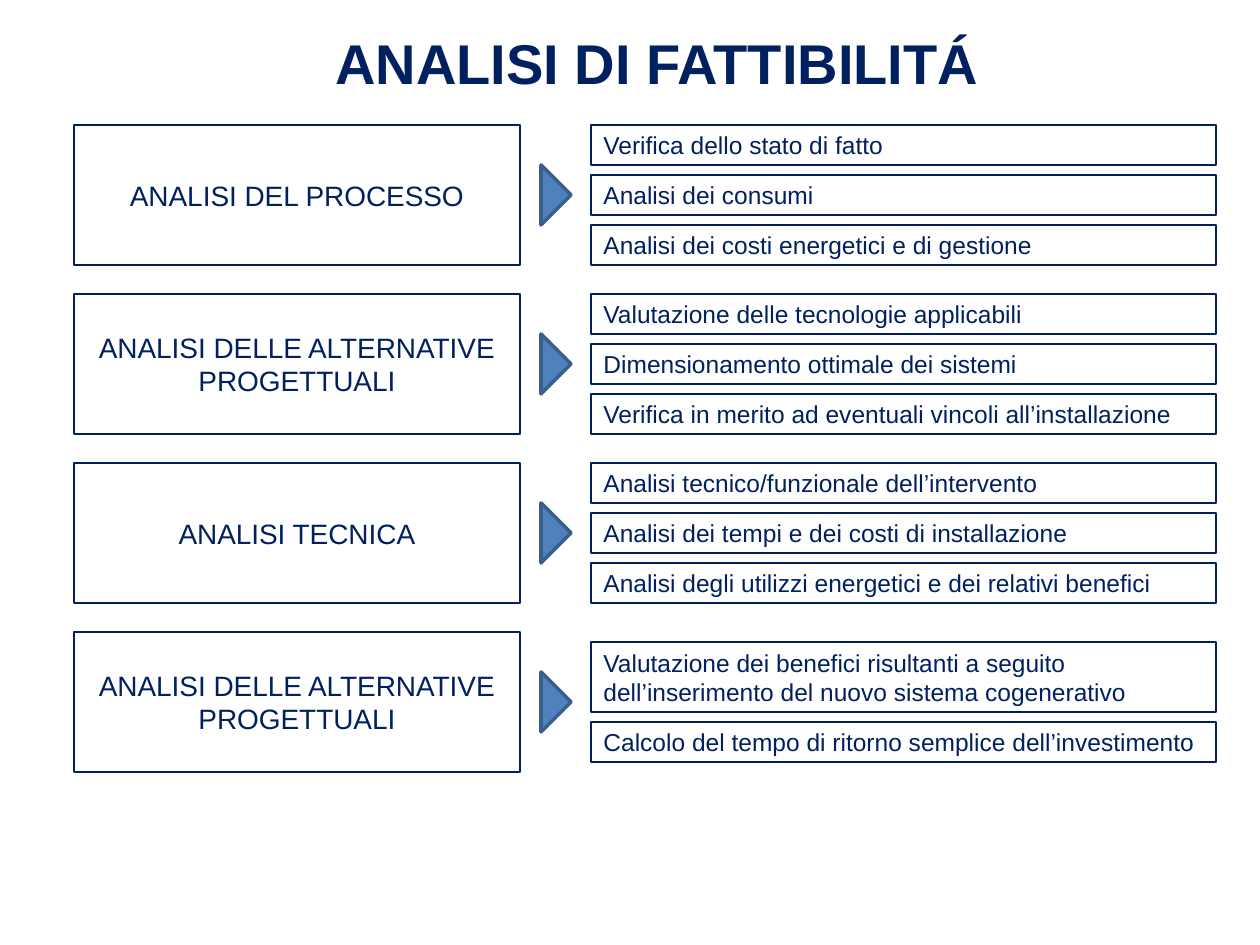
from pptx import Presentation
from pptx.dml.color import RGBColor
from pptx.enum.shapes import MSO_SHAPE
from pptx.enum.text import MSO_ANCHOR, PP_ALIGN
from pptx.util import Emu, Pt

NAVY, BLUE, STEEL = "002060", "4F81BD", "3A5F8C"


def px(n):
    return Emu(round(n * 914400 / 126))


def color(value):
    return RGBColor.from_string(value)


class Board:
    font = "Arial"

    def __init__(self, slide):
        self.s = slide

    def add_text(self, tf, text, size, align=PP_ALIGN.LEFT, bold=False):
        tf.word_wrap = True
        p = tf.paragraphs[0]
        p.alignment = align
        r = p.add_run()
        r.text = text
        r.font.name = self.font
        r.font.size = Pt(size)
        r.font.bold = bold
        r.font.color.rgb = color(NAVY)

    def title(self, x, y, w, h, text):
        tf = self.s.shapes.add_textbox(px(x), px(y), px(w), px(h)).text_frame
        tf.margin_top, tf.margin_bottom = px(12), 0
        self.add_text(tf, text, 32, bold=True)

    def shape(self, kind, x, y, w, h, line, width):
        sp = self.s.shapes.add_shape(kind, px(x), px(y), px(w), px(h))
        sp.shadow.inherit = False
        sp.line.color.rgb = color(line)
        sp.line.width = Pt(width)
        return sp

    def box(self, x, y, w, h, text, size, align=PP_ALIGN.LEFT):
        sp = self.shape(MSO_SHAPE.RECTANGLE, x, y, w, h, NAVY, 1.5)
        sp.fill.background()
        sp.text_frame.vertical_anchor = MSO_ANCHOR.MIDDLE
        self.add_text(sp.text_frame, text, size, align)

    def pointer(self, x, y, w, h):
        sp = self.shape(MSO_SHAPE.ISOSCELES_TRIANGLE, x, y, w, h, STEEL, 2)
        sp.rotation = 90
        sp.fill.solid()
        sp.fill.fore_color.rgb = color(BLUE)


# Each phase: name, then its steps as (text, box height)
LOW, TALL = 40, 70
PHASES = [
    ("ANALISI DEL PROCESSO", [
        ("Verifica dello stato di fatto", LOW),
        ("Analisi dei consumi", LOW),
        ("Analisi dei costi energetici e di gestione", LOW)]),
    ("ANALISI DELLE ALTERNATIVE PROGETTUALI", [
        ("Valutazione delle tecnologie applicabili", LOW),
        ("Dimensionamento ottimale dei sistemi", LOW),
        ("Verifica in merito ad eventuali vincoli all’installazione", LOW)]),
    ("ANALISI TECNICA", [
        ("Analisi tecnico/funzionale dell’intervento", LOW),
        ("Analisi dei tempi e dei costi di installazione", LOW),
        ("Analisi degli utilizzi energetici e dei relativi benefici", LOW)]),
    ("ANALISI DELLE ALTERNATIVE PROGETTUALI", [
        ("Valutazione dei benefici risultanti a seguito "
         "dell’inserimento del nuovo sistema cogenerativo", TALL),
        ("Calcolo del tempo di ritorno semplice dell’investimento", LOW)]),
]
TOP, PITCH, PHASE_H, GAP = 125, 169, 140, 10


def main():
    prs = Presentation()
    prs.slide_width, prs.slide_height = px(1260), px(945)
    board = Board(prs.slides.add_slide(prs.slide_layouts[6]))

    # Title
    board.title(323, 16, 677, 79, "ANALISI DI FATTIBILITÁ")

    for i, (name, steps) in enumerate(PHASES):
        # Phase box and pointer
        y = TOP + i * PITCH
        middle = y + PHASE_H // 2
        board.box(74, y, 446, PHASE_H, name, 16, PP_ALIGN.CENTER)
        board.pointer(526, middle - 15, 60, 30)

        # Steps, stacked around the middle of the phase
        stack = sum(h for _, h in steps) + GAP * (len(steps) - 1)
        y = middle - stack // 2
        for text, h in steps:
            board.box(591, y, 625, h, text, 14)
            y += h + GAP

    prs.save("out.pptx")


if __name__ == "__main__":
    main()
